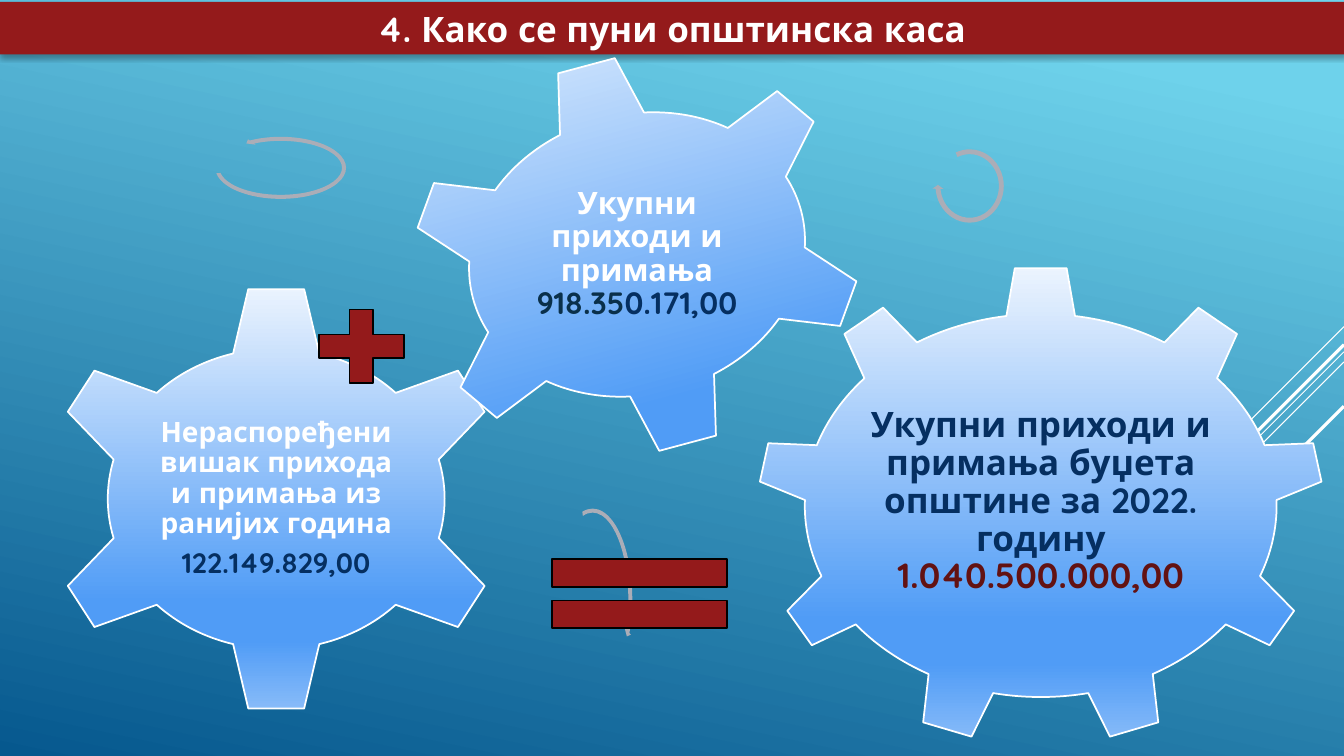
from lxml import etree
from pptx import Presentation
from pptx.dml.color import RGBColor
from pptx.enum import shapes, text
from pptx.oxml import parse_xml
from pptx.oxml.ns import nsdecls, qn
from pptx.util import Pt

WHITE = RGBColor(0xFF, 0xFF, 0xFF)
BLACK = RGBColor(0, 0, 0)
RED = RGBColor(0x94, 0x1A, 0x1B)
DARK_RED = RGBColor(0x63, 0x12, 0x12)
NAVY = RGBColor(0x05, 0x2F, 0x61)
INK = RGBColor(0x0A, 0x30, 0x4A)
GREY = RGBColor(0xAB, 0xAD, 0xB7)
SKY = RGBColor(0x6E, 0xD2, 0xEB)
DEEP = RGBColor(0x06, 0x58, 0x8E)
PALE = RGBColor(0xEC, 0xF4, 0xFE)
BLUE = RGBColor(0x50, 0x9C, 0xF6)
SOFT_BLUE = RGBColor(0x8B, 0xBD, 0xF9)

WIDTH, HEIGHT = 960, 540
FONT = "Quicksand"
SHAPE = shapes.MSO_SHAPE


def set_attrs(obj, values):
    for name, value in values.items():
        setattr(obj, name, value)


def set_gradient(fill, owner, stops, angle):
    """Stops are (percent, colour); the angle runs clockwise."""
    fill.gradient()
    fill.gradient_angle = 360 - angle
    gs_list = owner.find(".//" + qn("a:gsLst"))
    for gs in list(gs_list):
        gs_list.remove(gs)
    for percent, color in stops:
        gs = etree.SubElement(gs_list, qn("a:gs"), pos=str(percent * 1000))
        etree.SubElement(gs, qn("a:srgbClr"), val=str(color))


def add_runs(p, runs, size):
    for words, color in runs:
        r = p.add_run()
        r.text = words
        set_attrs(r.font, {"name": FONT, "size": Pt(size), "bold": True})
        r.font.color.rgb = color


def add_preset(s, kind, box, color=None, line=None, adj=()):
    sp = s.shapes.add_shape(kind, *map(Pt, box))
    sp.shadow.inherit = False
    for i, value in enumerate(adj):
        sp.adjustments[i] = value
    if color is not None:
        sp.fill.solid()
        sp.fill.fore_color.rgb = color
    if line is None:
        sp.line.fill.background()
    else:
        sp.line.color.rgb = line
        sp.line.width = Pt(1.25)
    return sp


def add_backdrop(s):
    set_gradient(s.background.fill, s.element, [(10, SKY), (100, DEEP)], 102)
    # Diagonal rays falling from the right edge: start, length, weight
    for y, run, weight in [(233.3, 72, 0.75), (251.3, 234.7, 0.75), (258.5, 149.2, 0.75),
                           (246.2, 137.5, 2.25), (290.2, 100, 2.25)]:
        ray = s.shapes.add_connector(shapes.MSO_CONNECTOR.STRAIGHT,
                                     Pt(WIDTH), Pt(y), Pt(WIDTH - run), Pt(y + run))
        ray.line.color.rgb = WHITE
        ray.line.width = Pt(weight)
        etree.SubElement(ray.element.spPr, qn("a:effectLst"))


def add_title_bar(s, box, words):
    sp = s.shapes.title
    set_attrs(sp, dict(zip(("left", "top", "width", "height"), map(Pt, box))))
    sp_pr = sp.element.spPr
    sp_pr.append(parse_xml(f'<a:prstGeom {nsdecls("a")} prst="roundRect"><a:avLst/></a:prstGeom>'))
    sp.fill.solid()
    sp.fill.fore_color.rgb = RED
    sp_pr.append(parse_xml(
        f'<a:effectLst {nsdecls("a")}><a:outerShdw blurRad="{Pt(3.5)}" dist="{Pt(2.2)}" '
        'dir="5400000" rotWithShape="0"><a:srgbClr val="000000"><a:alpha val="32000"/>'
        '</a:srgbClr></a:outerShdw></a:effectLst>'))
    tf = sp.text_frame
    set_attrs(tf, {"auto_size": text.MSO_AUTO_SIZE.NONE, "word_wrap": True,
                   "vertical_anchor": text.MSO_ANCHOR.MIDDLE})
    p = tf.paragraphs[0]
    p.alignment = text.PP_ALIGN.CENTER
    add_runs(p, [(words, WHITE)], 25)


def add_gear(s, kind, box, inset, size, paragraphs, rotation=0):
    """Inset is the side, top and bottom margin of the label inside the gear."""
    left, top, width, height = box
    side, above, below = inset
    sp = add_preset(s, kind, box, line=WHITE)
    sp.rotation = rotation
    set_gradient(sp.fill, sp.element,
                 [(0, PALE), (74, BLUE), (83, BLUE), (100, SOFT_BLUE)], 90)
    # Upright label
    label = s.shapes.add_textbox(Pt(left + side), Pt(top + above),
                                 Pt(width - 2 * side), Pt(height - above - below))
    tf = label.text_frame
    set_attrs(tf, {"word_wrap": True, "vertical_anchor": text.MSO_ANCHOR.MIDDLE})
    set_attrs(tf, {f"margin_{edge}": Pt(2.2) for edge in ("left", "top", "right", "bottom")})
    for i, runs in enumerate(paragraphs):
        p = tf.add_paragraph() if i else tf.paragraphs[0]
        set_attrs(p, {"alignment": text.PP_ALIGN.CENTER, "line_spacing": 0.9,
                      "space_after": Pt(7)})
        add_runs(p, runs, size)


def add_gears(s):
    add_gear(s, SHAPE.GEAR_9, (540.7, 190.1, 405.4, 342), (77, 80.6, 85.7), 25,
             [[("Укупни приходи и примања буџета општине за 2022. годину ", NAVY),
               ("1.040.500.000,00", DARK_RED)]])
    add_gear(s, SHAPE.GEAR_6, (31, 203, 332.6, 306.7), (81, 77.8, 77.8), 20,
             [[("Нераспоређени вишак прихода и примања из ранијих година", WHITE)],
              [("122.149.829,00", NAVY)]])
    add_gear(s, SHAPE.GEAR_6, (290.9, 38.9, 328.3, 285.8), (74.5, 60, 60), 22,
             [[("Укупни приходи и примања ", WHITE), ("918.35", INK), ("0.171,00", NAVY)]],
             rotation=345)


def add_arrows(s):
    for kind, box, adj in [
        (SHAPE.CIRCULAR_ARROW, (393.1, 361.4, 60.5, 133.2),
         (0.047, 2.99, 25.464, 157.977, 0.055)),
        (SHAPE.CIRCULAR_ARROW, (666, 104.4, 53.3, 56.9),
         (0.065, 4.3, 104.891, 148.378, 0.075)),
        (SHAPE.LEFT_CIRCULAR_ARROW, (151.9, 95.8, 97.2, 48.2),
         (0.06, 3.941, 133.138, 105.082, 0.07)),
    ]:
        add_preset(s, kind, box, GREY, adj=adj)


def add_signs(s):
    add_preset(s, SHAPE.MATH_PLUS, (216.7, 211.7, 82.8, 71.3), RED, BLACK)
    add_preset(s, SHAPE.MATH_EQUAL, (371.5, 382.3, 170.6, 83.5), RED, BLACK)


def main():
    prs = Presentation()
    prs.slide_width, prs.slide_height = Pt(WIDTH), Pt(HEIGHT)
    s = prs.slides.add_slide(prs.slide_layouts[5])
    add_backdrop(s)
    add_title_bar(s, (0, 1.4, WIDTH, 37.4), "4. Како се пуни општинска каса")
    add_gears(s)
    add_arrows(s)
    add_signs(s)
    prs.save("out.pptx")


if __name__ == "__main__":
    main()
